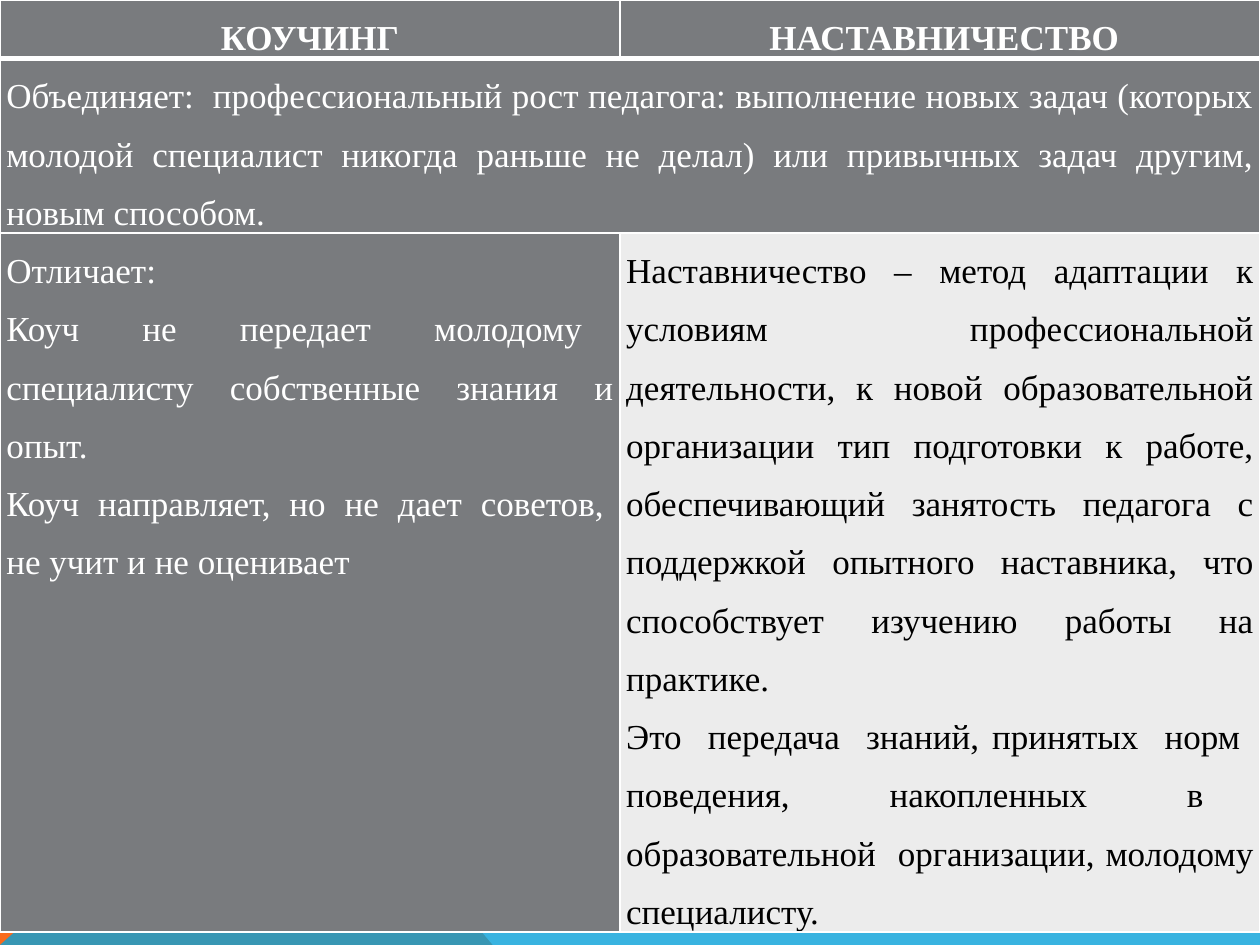
from lxml.etree import SubElement
from pptx import Presentation
from pptx.dml.color import RGBColor
from pptx.enum.text import PP_ALIGN as Align
from pptx.oxml import parse_xml
from pptx.oxml.ns import nsdecls, qn
from pptx.util import Inches, Pt

# Content: (row, column, fill, text format, paragraphs)
GREY, PALE, WHITE, BLACK = "797B7E", "ECECEC", "FFFFFF", "000000"
HEADER = {"bold": True, "align": Align.CENTER}
CELLS = [
    (0, 0, GREY, HEADER, ["КОУЧИНГ"]),
    (0, 1, GREY, HEADER, ["\u00a0НАСТАВНИЧЕСТВО"]),
    (1, 0, GREY, {}, [
        "Объединяет:  профессиональный рост педагога: выполнение новых задач "
        "(которых молодой специалист никогда раньше не делал) или привычных "
        "задач другим, новым способом."]),
    (2, 0, GREY, {}, [
        "Отличает:",
        "Коуч  не  передает  молодому  специалисту собственные знания и опыт. ",
        "Коуч  направляет,  но  не  дает  советов,  не учит и не оценивает"]),
    (2, 1, PALE, {"color": BLACK}, [
        "Наставничество – метод адаптации к условиям профессиональной "
        "деятельности, к новой образовательной организации тип подготовки к "
        "работе, обеспечивающий занятость педагога с поддержкой опытного "
        "наставника, что способствует изучению работы на практике.",
        "Это  передача  знаний, принятых  норм  поведения,  накопленных  в  "
        "образовательной  организации, молодому специалисту."]),
]
COLUMNS = [4.92, 5.08]
ROWS = [0.36, 1.19, 5.34]
# Background bands: (fill, opacity in percent, outline points)
BANDS = [
    ("F96A1B", 100, [(0, 7.5), (0, 5.52), (2.23, 5.52), (3.91, 7.5)]),
    ("08A1D9", 80, [(0, 7.5), (2.23, 5.52), (10, 5.53), (10, 7.5)]),
]


def paint(fill, color):
    fill.solid()
    fill.fore_color.rgb = RGBColor.from_string(color)


def add_band(slide, color, opacity, points):
    corners = [(Inches(x), Inches(y)) for x, y in points]
    builder = slide.shapes.build_freeform(*corners[0])
    builder.add_line_segments(corners[1:], close=True)
    band = builder.convert_to_shape()
    band.shadow.inherit = False
    band.line.fill.background()
    paint(band.fill, color)
    if opacity < 100:
        tint = band.fill._xPr.find(qn("a:solidFill"))[0]
        SubElement(tint, qn("a:alpha"), val=str(opacity * 1000))


def write(cell, paragraphs, color=WHITE, bold=False, align=Align.JUSTIFY):
    frame = cell.text_frame
    for index, text in enumerate(paragraphs):
        para = frame.add_paragraph() if index else frame.paragraphs[0]
        para.alignment = align
        para.line_spacing = 1.5
        span = para.add_run()
        span.text = text
        span.font.name = "Times New Roman"
        span.font.size = Pt(20)
        span.font.bold = bold
        span.font.color.rgb = RGBColor.from_string(color)


def add_borders(cell, top, bottom):
    properties = cell._tc.get_or_add_tcPr()
    widths = {"lnL": 1, "lnR": 1, "lnT": top, "lnB": bottom}
    for index, (side, width) in enumerate(widths.items()):
        properties.insert(index, parse_xml(
            f'<a:{side} {nsdecls("a")} w="{Pt(width)}"><a:solidFill>'
            f'<a:srgbClr val="{WHITE}"/></a:solidFill></a:{side}>'))


deck = Presentation()
deck.slide_width, deck.slide_height = Inches(10), Inches(7.5)
slide = deck.slides.add_slide(deck.slide_layouts[6])

# Background
for band in BANDS:
    add_band(slide, *band)

# Comparison table
table = slide.shapes.add_table(
    len(ROWS), len(COLUMNS), 0, 0, Inches(sum(COLUMNS)), Inches(sum(ROWS))).table
for column, width in zip(table.columns, COLUMNS):
    column.width = Inches(width)
for row, height in zip(table.rows, ROWS):
    row.height = Inches(height)
table.cell(1, 0).merge(table.cell(1, 1))

for row, column, color, style, paragraphs in CELLS:
    cell = table.cell(row, column)
    paint(cell.fill, color)
    cell.margin_left = cell.margin_right = Inches(0.05)
    cell.margin_top = cell.margin_bottom = 0
    write(cell, paragraphs, **style)

# A heavier rule under the header row
for row in range(len(ROWS)):
    for column in range(len(COLUMNS)):
        add_borders(table.cell(row, column),
                    top=3 if row == 1 else 1, bottom=3 if row == 0 else 1)

deck.save("out.pptx")
